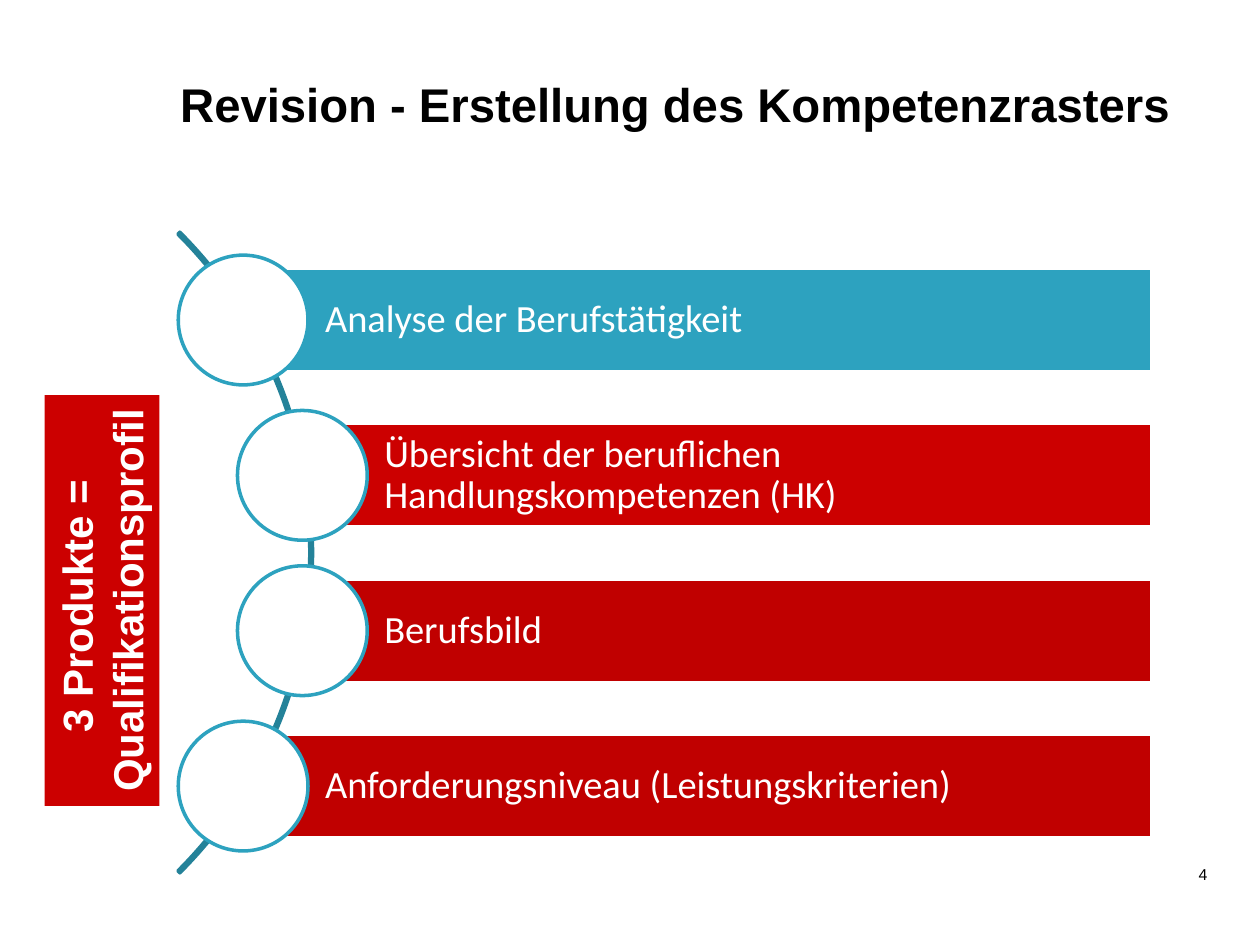
import pptx
from pptx.dml.color import RGBColor
from pptx.enum.shapes import MSO_SHAPE
from pptx.enum.text import MSO_ANCHOR, MSO_AUTO_SIZE, PP_ALIGN
from pptx.util import Inches, Pt

BLACK = RGBColor(0x00, 0x00, 0x00)
WHITE = RGBColor(0xFF, 0xFF, 0xFF)
TEAL = RGBColor(0x2D, 0xA2, 0xBF)
DARK_TEAL = RGBColor(0x24, 0x82, 0x99)
RED = RGBColor(0xCC, 0x00, 0x00)
DARK_RED = RGBColor(0xC0, 0x00, 0x00)

# Content
TITLE = "Revision - Erstellung des Kompetenzrasters"
PRODUCTS = "3 Produkte = \vQualifikationsprofil"
PAGE = "4"
STEPS = [  # text, bar colour, left edge of the bar
    ("Analyse der Berufstätigkeit", TEAL, 1.93),
    ("Übersicht der beruflichen Handlungskompetenzen (HK)", RED, 2.40),
    ("Berufsbild", DARK_RED, 2.40),
    ("Anforderungsniveau (Leistungskriterien)", DARK_RED, 1.93),
]

# Geometry in inches
FIRST_CENTER, STEP_GAP = 2.54, 1.233
BAR_RIGHT, BAR_HEIGHT = 9.14, 0.82
CIRCLE = 1.03


def add_shape(s, kind, left, top, width, height, fill=None, line=None):
    sp = s.shapes.add_shape(kind, Inches(left), Inches(top),
                            Inches(width), Inches(height))
    sp.shadow.inherit = False
    if fill is None:
        sp.fill.background()
    else:
        sp.fill.solid()
        sp.fill.fore_color.rgb = fill
    if line is None:
        sp.line.fill.background()
    else:
        sp.line.color.rgb = line
        sp.line.width = Pt(2)
    return sp


def write(tf, text, font, size, color, align=PP_ALIGN.LEFT, bold=False):
    tf.text = text
    p = tf.paragraphs[0]
    p.alignment = align
    for r in p.runs:
        r.font.name, r.font.size, r.font.bold = font, Pt(size), bold
        r.font.color.rgb = color
    return p


def main():
    prs = pptx.Presentation()
    prs.slide_width, prs.slide_height = Inches(10), Inches(7.5)
    s = prs.slides.add_slide(prs.slide_layouts[5])

    # Title
    title = s.shapes.title
    title.left, title.top = Inches(1.33), Inches(0.55)
    title.width, title.height = Inches(8.16), Inches(0.78)
    tf = title.text_frame
    tf.auto_size = MSO_AUTO_SIZE.NONE
    tf.vertical_anchor = MSO_ANCHOR.TOP
    write(tf, TITLE, "Arial", 27, BLACK, bold=True)

    # Arc behind the steps
    arc = add_shape(s, MSO_SHAPE.BLOCK_ARC, -4.71, 0.79, 7.19, 7.19,
                    line=DARK_TEAL)
    for i, value in enumerate((189, 27, 0.003)):
        arc.adjustments[i] = value

    # Steps: a bar with a circle centred on its left edge
    for i, (text, color, left) in enumerate(STEPS):
        center = FIRST_CENTER + i * STEP_GAP
        bar = add_shape(s, MSO_SHAPE.RECTANGLE, left, center - BAR_HEIGHT / 2,
                        BAR_RIGHT - left, BAR_HEIGHT, color, WHITE)
        tf = bar.text_frame
        tf.word_wrap = True
        tf.vertical_anchor = MSO_ANCHOR.MIDDLE
        tf.margin_left = Inches(0.65)
        tf.margin_top = tf.margin_right = tf.margin_bottom = Inches(0.06)
        write(tf, text, "Calibri", 22, WHITE).line_spacing = 0.9
        add_shape(s, MSO_SHAPE.OVAL, left - CIRCLE / 2, center - CIRCLE / 2,
                  CIRCLE, CIRCLE, WHITE, TEAL)

    # Page number
    page = s.shapes.add_textbox(Inches(7.24), Inches(6.8),
                                Inches(2.44), Inches(0.4))
    page.text_frame.word_wrap = True
    p = write(page.text_frame, PAGE, "Arial", 9, BLACK, PP_ALIGN.RIGHT)
    p.line_spacing = Pt(12)

    # Vertical label
    label = add_shape(s, MSO_SHAPE.RECTANGLE, -0.82, 4.31, 3.26, 0.91, RED)
    label.rotation = 270
    tf = label.text_frame
    tf.word_wrap = False
    tf.auto_size = MSO_AUTO_SIZE.SHAPE_TO_FIT_TEXT
    tf.vertical_anchor = MSO_ANCHOR.TOP
    write(tf, PRODUCTS, "Arial", 24, WHITE, PP_ALIGN.CENTER, bold=True)

    prs.save("out.pptx")


if __name__ == "__main__":
    main()
